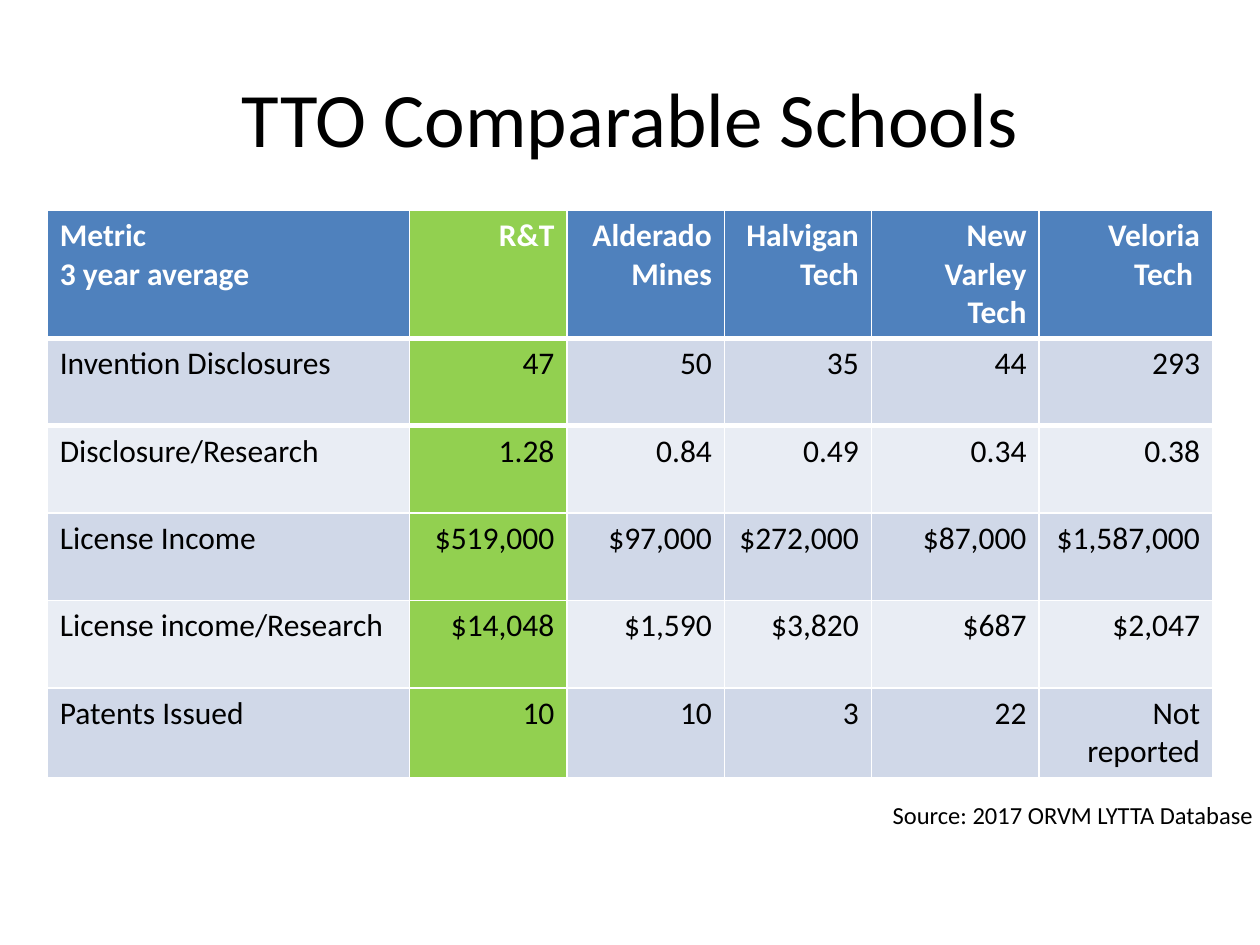
from dataclasses import dataclass

from lxml.etree import SubElement
from pptx import Presentation
from pptx.dml.color import RGBColor
from pptx.enum.text import MSO_ANCHOR, PP_ALIGN
from pptx.oxml.ns import qn
from pptx.util import Pt

FONT = "Calibri"
BLACK, WHITE = "000000", "FFFFFF"
HEADER_BLUE, HIGHLIGHT_GREEN = "4F81BD", "92D050"
BANDS = ("D0D8E8", "E9EDF4")
HIGHLIGHT_COLUMN = 1


@dataclass(frozen=True)
class School:
    name: str
    width: float
    values: tuple[str, ...]


METRICS = School("Metric\n3 year average", 207, (
    "Invention Disclosures", "Disclosure/Research", "License Income",
    "License income/Research", "Patents Issued"))
SCHOOLS = (
    School("R&T", 90, ("47", "1.28", "$519,000", "$14,048", "10")),
    School("Alderado Mines", 90, ("50", "0.84", "$97,000", "$1,590", "10")),
    School("Halvigan Tech", 84, ("35", "0.49", "$272,000", "$3,820", "3")),
    School("New Varley Tech", 95.8, ("44", "0.34", "$87,000", "$687", "22")),
    School("Veloria Tech ", 99.2,
           ("293", "0.38", "$1,587,000", "$2,047", "Not reported")),
)


def rgb(color: str) -> RGBColor:
    return RGBColor.from_string(color)


def format_text(frame, size: float, color: str = BLACK, bold: bool = False,
                align: PP_ALIGN = PP_ALIGN.LEFT) -> None:
    for paragraph in frame.paragraphs:
        paragraph.alignment = align
        paragraph.font.name = FONT
        paragraph.font.size = Pt(size)
        paragraph.font.bold = bold
        paragraph.font.color.rgb = rgb(color)


def cell_fill(row: int, column: int) -> str:
    if column == HIGHLIGHT_COLUMN:
        return HIGHLIGHT_GREEN
    return HEADER_BLUE if row == 0 else BANDS[(row - 1) % 2]


def add_border(cell, edge: str, color: str, width: float) -> None:
    """Add one cell border; edge is the tag lnL, lnR, lnT or lnB."""
    properties = cell._tc.get_or_add_tcPr()
    line = SubElement(properties, qn(f"a:{edge}"), w=str(Pt(width)))
    solid = SubElement(line, qn("a:solidFill"))
    SubElement(solid, qn("a:srgbClr"), val=color)
    properties.insert(0, line)


def add_title(slide, wording: str) -> None:
    title = slide.shapes.title
    title.left, title.top, title.width, title.height = (
        Pt(36), Pt(21.6), Pt(648), Pt(90))
    title.text_frame.text = wording
    title.text_frame.vertical_anchor = MSO_ANCHOR.MIDDLE
    format_text(title.text_frame, 44, align=PP_ALIGN.CENTER)


def add_comparison(slide, columns: tuple[School, ...]) -> None:
    header_height, row_height = 46, 50
    row_count = len(METRICS.values) + 1
    width = sum(column.width for column in columns)
    height = header_height + row_height * (row_count - 1)
    table = slide.shapes.add_table(row_count, len(columns), Pt(27), Pt(120.2),
                                   Pt(width), Pt(height)).table
    for row_index, row in enumerate(table.rows):
        row.height = Pt(row_height if row_index else header_height)
    for column_index, column in enumerate(columns):
        table.columns[column_index].width = Pt(column.width)
        align = PP_ALIGN.RIGHT if column_index else PP_ALIGN.LEFT
        for row_index, wording in enumerate((column.name, *column.values)):
            is_header = row_index == 0
            cell = table.cell(row_index, column_index)
            cell.text = wording
            cell.fill.solid()
            cell.fill.fore_color.rgb = rgb(cell_fill(row_index, column_index))
            format_text(cell.text_frame, 18, WHITE if is_header else BLACK,
                        is_header, align)
        add_border(table.cell(0, column_index), "lnB", WHITE, 3)
        add_border(table.cell(1, column_index), "lnT", WHITE, 3)


def add_source_note(slide, wording: str) -> None:
    note = slide.shapes.add_textbox(Pt(503), Pt(453.4), Pt(222), Pt(24.2))
    note.text_frame.word_wrap = False
    note.text_frame.text = wording
    format_text(note.text_frame, 14)


def main() -> None:
    presentation = Presentation()
    presentation.slide_width, presentation.slide_height = Pt(720), Pt(540)
    title_only = presentation.slide_layouts[5]
    slide = presentation.slides.add_slide(title_only)
    add_title(slide, "TTO Comparable Schools")
    add_comparison(slide, (METRICS, *SCHOOLS))
    add_source_note(slide, "Source: 2017 ORVM LYTTA Database")
    presentation.save("out.pptx")


if __name__ == "__main__":
    main()
